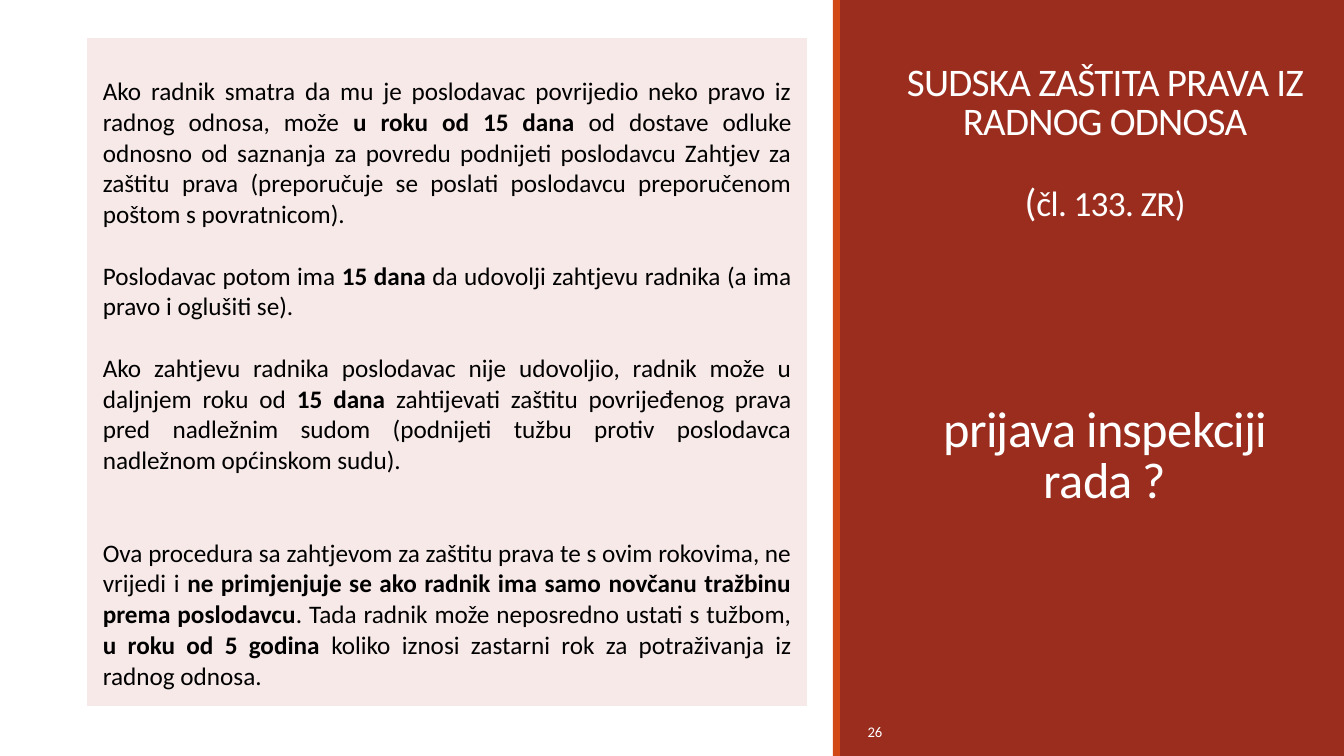
"""Build the slide on court protection of employment rights."""
from pptx import Presentation, util as u
from pptx.dml.color import RGBColor
from pptx.enum import shapes, text
from pptx.util import Inches, Pt

THEME = {
    "font": "Calibri",
    "panel": "9B2D1F", "stripe": "D34817", "cell": "F7E9E8",
    "light": "FFFFFF", "dark": "000000",
    "body": 18, "heading": 27.9, "article": 25.2, "question": 36, "number": 10.5,
}

# Each paragraph: space before in points, then (text, bold) runs.
PROCEDURE = [
    (0, [("Ako radnik smatra da mu je poslodavac povrijedio neko pravo iz radnog odnosa, može ", False),
         ("u roku od 15 dana ", True),
         ("od dostave odluke odnosno od saznanja za povredu podnijeti poslodavcu Zahtjev za zaštitu prava "
          "(preporučuje se poslati poslodavcu preporučenom poštom s povratnicom).", False)]),
    (22, [("Poslodavac potom ima ", False), ("15 dana ", True),
          ("da udovolji zahtjevu radnika (a ima pravo i oglušiti se).", False)]),
    (22, [("Ako zahtjevu radnika poslodavac nije udovoljio, radnik može u daljnjem roku od ", False),
          ("15 dana ", True),
          ("zahtijevati zaštitu povrijeđenog prava pred nadležnim sudom "
           "(podnijeti tužbu protiv poslodavca nadležnom općinskom sudu).", False)]),
    (44, [("Ova procedura sa zahtjevom za zaštitu prava te s ovim rokovima, ne vrijedi i ", False),
          ("ne primjenjuje se ako radnik ima samo novčanu tražbinu prema poslodavcu", True),
          (". Tada radnik može neposredno ustati s tužbom, ", False),
          ("u roku od 5 godina ", True),
          ("koliko iznosi zastarni rok za potraživanja iz radnog odnosa.", False)]),
]
TITLE = [
    (0, [("SUDSKA ZAŠTITA PRAVA IZ RADNOG ODNOSA", "heading")]),
    (29, [("(", "heading"), ("čl. 133. ZR)", "article")]),
    (130, [("prijava inspekciji rada ?", "question")]),
]
PAGE_NUMBER = "26"
WIDTH, HEIGHT = 13.33, 7.5
PANEL_LEFT, STRIPE_WIDTH = 8.33, 0.07


def color(name):
    return RGBColor.from_string(THEME[name])


def add_bar(slide, left, width, fill):
    bar = slide.shapes.add_shape(shapes.MSO_SHAPE.RECTANGLE, Inches(left), 0, Inches(width), Inches(HEIGHT))
    bar.shadow.inherit = False
    bar.fill.solid()
    bar.fill.fore_color.rgb = color(fill)
    bar.line.fill.background()


def add_run(paragraph, wording, size, ink, bold=False):
    run = paragraph.add_run()
    run.text = wording
    run.font.name = THEME["font"]
    run.font.size = Pt(THEME[size])
    run.font.color.rgb = color(ink)
    run.font.bold = bold
    return run


def add_paragraphs(frame, content, alignment):
    for index, (gap, runs) in enumerate(content):
        paragraph = frame.add_paragraph() if index else frame.paragraphs[0]
        paragraph.alignment = alignment
        paragraph.space_before = Pt(gap)
        yield paragraph, runs


def add_text_frame(slide, left, top, width, height, anchor):
    box = slide.shapes.add_textbox(*map(Inches, (left, top, width, height)))
    frame = box.text_frame
    frame.word_wrap = True
    frame.vertical_anchor = anchor
    return frame


def add_procedure(slide):
    table = slide.shapes.add_table(1, 1, *map(Inches, (0.86, 0.37, 7.15, 6.64))).table
    table.first_row = table.horz_banding = False
    cell = table.cell(0, 0)
    cell.fill.solid()
    cell.fill.fore_color.rgb = color("cell")
    cell.margin_left = cell.margin_right = Inches(0.16)
    cell.margin_top, cell.margin_bottom = Inches(0.39), Inches(0.08)
    for paragraph, runs in add_paragraphs(cell.text_frame, PROCEDURE, text.PP_ALIGN.JUSTIFY):
        for wording, bold in runs:
            add_run(paragraph, wording, "body", "dark", bold)


def add_title(slide):
    frame = add_text_frame(slide, 8.85, 0.5, 4.22, 4.6, text.MSO_ANCHOR.BOTTOM)
    for paragraph, runs in add_paragraphs(frame, TITLE, text.PP_ALIGN.CENTER):
        paragraph.line_spacing = 0.85
        for wording, size in runs:
            run = add_run(paragraph, wording, size, "light")
            run.font._element.set("spc", "-50")


def add_page_number(slide):
    frame = add_text_frame(slide, PANEL_LEFT, 7.06, 0.52, 0.4, text.MSO_ANCHOR.MIDDLE)
    paragraph = frame.paragraphs[0]
    paragraph.alignment = text.PP_ALIGN.RIGHT
    add_run(paragraph, PAGE_NUMBER, "number", "light")


def main():
    presentation = Presentation()
    presentation.slide_width, presentation.slide_height = u.Inches(WIDTH), u.Inches(HEIGHT)
    slide = presentation.slides.add_slide(presentation.slide_layouts[6])
    add_bar(slide, PANEL_LEFT, WIDTH - PANEL_LEFT, "panel")
    add_bar(slide, PANEL_LEFT - STRIPE_WIDTH, STRIPE_WIDTH, "stripe")
    add_title(slide)
    add_procedure(slide)
    add_page_number(slide)
    presentation.save("out.pptx")


if __name__ == "__main__":
    main()
